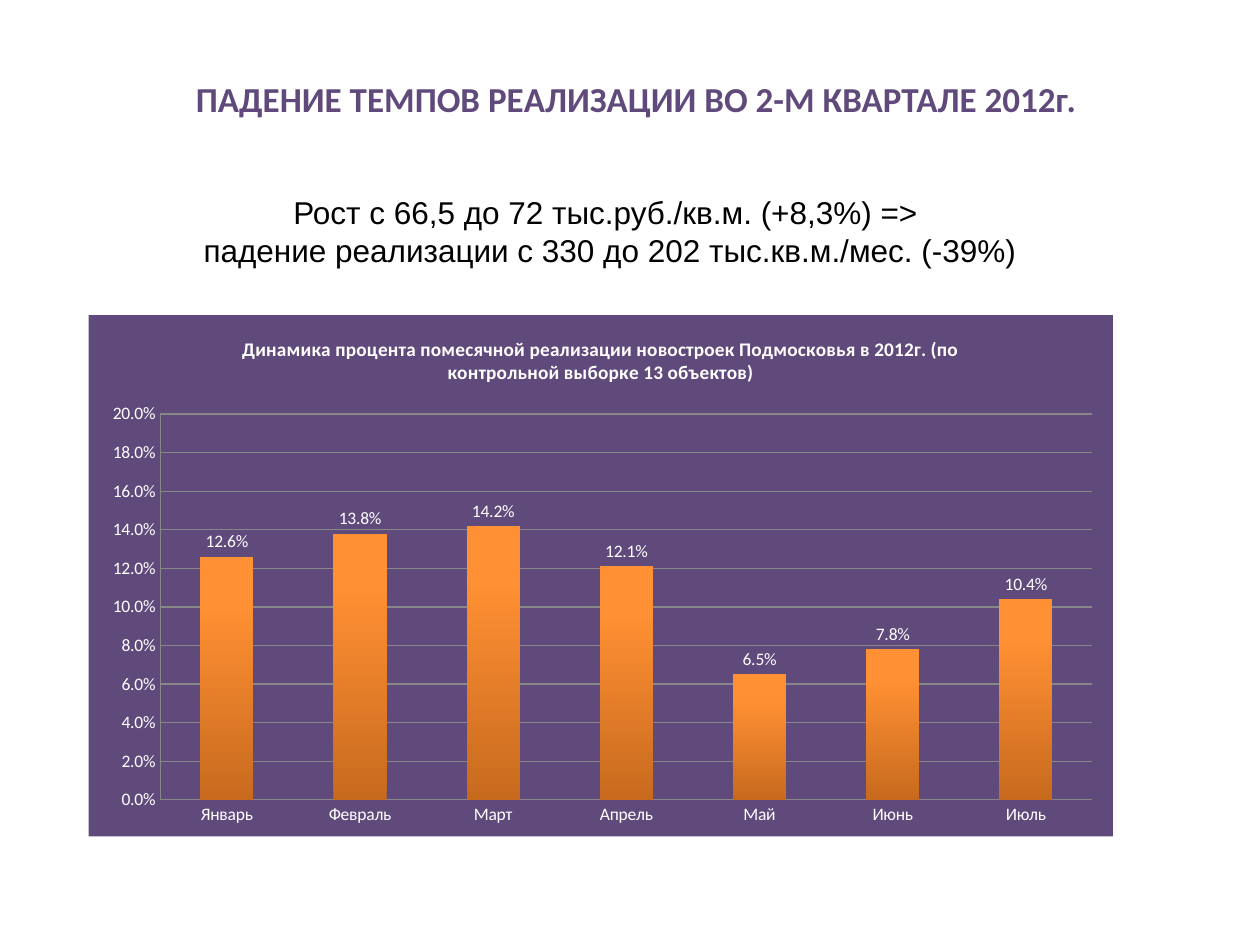
from lxml import etree
from pptx import Presentation
from pptx.chart.data import CategoryChartData
from pptx.dml.color import RGBColor
from pptx.enum import chart as ec, text as et
from pptx.oxml import ns, parse_xml
from pptx.util import Pt

COLORS = {"violet": "604A7B", "white": "FFFFFF", "black": "000000",
          "grid": "878787", "light": "FF9033", "dark": "C86A1E"}
MONTHS = ["Январь", "Февраль", "Март", "Апрель", "Май", "Июнь", "Июль"]
RATES = [0.126, 0.138, 0.142, 0.121, 0.065, 0.078, 0.104]


def rgb(name):
    return RGBColor.from_string(COLORS[name])


def style(font, size, color, face="Calibri", bold=False):
    font.size, font.name, font.bold = Pt(size), face, bold
    font.color.rgb = rgb(color)


def place(shape, box):
    shape.left, shape.top, shape.width, shape.height = map(Pt, box)


def write(frame, lines, *look):
    """Fill a frame with centred paragraphs, one run each."""
    frame.word_wrap = True
    for i, line in enumerate(lines):
        para = frame.add_paragraph() if i else frame.paragraphs[0]
        para.alignment = et.PP_ALIGN.CENTER
        run = para.add_run()
        run.text = line
        style(run.font, *look)


def add_title(slide, box):
    title = slide.shapes.title
    place(title, box)
    title.text_frame.vertical_anchor = et.MSO_ANCHOR.MIDDLE
    write(title.text_frame, ["ПАДЕНИЕ ТЕМПОВ РЕАЛИЗАЦИИ ВО 2-М КВАРТАЛЕ 2012г."],
          20, "violet", "Calibri", True)


def add_note(slide, box):
    note = slide.shapes.add_textbox(*map(Pt, box))
    write(note.text_frame, ["Рост с 66,5 до 72 тыс.руб./кв.м. (+8,3%) => ",
                            "падение реализации с 330 до 202 тыс.кв.м./мес. (-39%)"],
          18, "black", "Arial")


def back():
    """Violet background properties for a chart part."""
    return parse_xml(
        f'<c:spPr {ns.nsdecls("c", "a")}><a:solidFill><a:srgbClr val="{COLORS["violet"]}"/>'
        '</a:solidFill><a:ln><a:noFill/></a:ln></c:spPr>')


def set_area(chart, x, y, w, h):
    """Place the inner plot by fractions of the chart and fill both areas."""
    root = chart._chartSpace
    root.find(ns.qn("c:txPr")).addprevious(back())
    plot = root.find(".//" + ns.qn("c:plotArea"))
    for old in plot.findall(ns.qn("c:layout")):
        plot.remove(old)
    layout = etree.Element(ns.qn("c:layout"))
    manual = etree.SubElement(layout, ns.qn("c:manualLayout"))
    for tag, val in [("layoutTarget", "inner"), ("xMode", "edge"), ("yMode", "edge"),
                     ("x", x), ("y", y), ("w", w), ("h", h)]:
        etree.SubElement(manual, ns.qn("c:" + tag)).set("val", str(val))
    plot.insert(0, layout)
    plot.append(back())


def set_axes(chart):
    for axis in (chart.category_axis, chart.value_axis):
        axis.major_tick_mark = axis.minor_tick_mark = ec.XL_TICK_MARK.NONE
        axis.format.line.color.rgb = rgb("grid")
        style(axis.tick_labels.font, 10, "white")
    axis = chart.value_axis
    axis.minimum_scale, axis.maximum_scale, axis.major_unit = 0, 0.2, 0.02
    axis.has_major_gridlines = True
    axis.major_gridlines.format.line.color.rgb = rgb("grid")
    axis.tick_labels.number_format = "0.0%"
    axis.tick_labels.number_format_is_linked = False


def set_bars(plot):
    plot.gap_width = 150
    plot.vary_by_categories = False
    fill = plot.series[0].format.fill
    fill.gradient()
    fill.gradient_angle = 90
    for stop, name, pos in zip(fill.gradient_stops, ("dark", "light"), (0, 0.8)):
        stop.color.rgb, stop.position = rgb(name), pos
    plot.has_data_labels = True
    labels = plot.data_labels
    labels.show_value = True
    labels.number_format, labels.number_format_is_linked = "0.0%", False
    labels.position = ec.XL_LABEL_POSITION.OUTSIDE_END
    style(labels.font, 10, "white")


def add_chart(slide, box):
    data = CategoryChartData(number_format="0.0%")
    data.categories = MONTHS
    data.add_series("Series 1", RATES)
    chart = slide.shapes.add_chart(ec.XL_CHART_TYPE.COLUMN_CLUSTERED,
                                   *map(Pt, box), data).chart
    style(chart.font, 10, "white")
    chart.has_legend = False
    chart.has_title = True
    write(chart.chart_title.text_frame,
          ["Динамика процента помесячной реализации новостроек Подмосковья "
           "в 2012г. (по контрольной выборке 13 объектов)"], 11, "white", "Calibri", True)
    chart.chart_title.include_in_layout = False
    set_axes(chart)
    set_bars(chart.plots[0])
    set_area(chart, 0.07, 0.19, 0.91, 0.74)


def main():
    deck = Presentation()
    deck.slide_width, deck.slide_height = Pt(720), Pt(540)
    slide = deck.slides.add_slide(deck.slide_layouts[5])
    add_title(slide, (39.6, 11.5, 648, 90))
    add_chart(slide, (50.6, 180, 585.4, 298))
    add_note(slide, (50.6, 106.6, 596, 51))
    deck.save("out.pptx")


if __name__ == "__main__":
    main()
